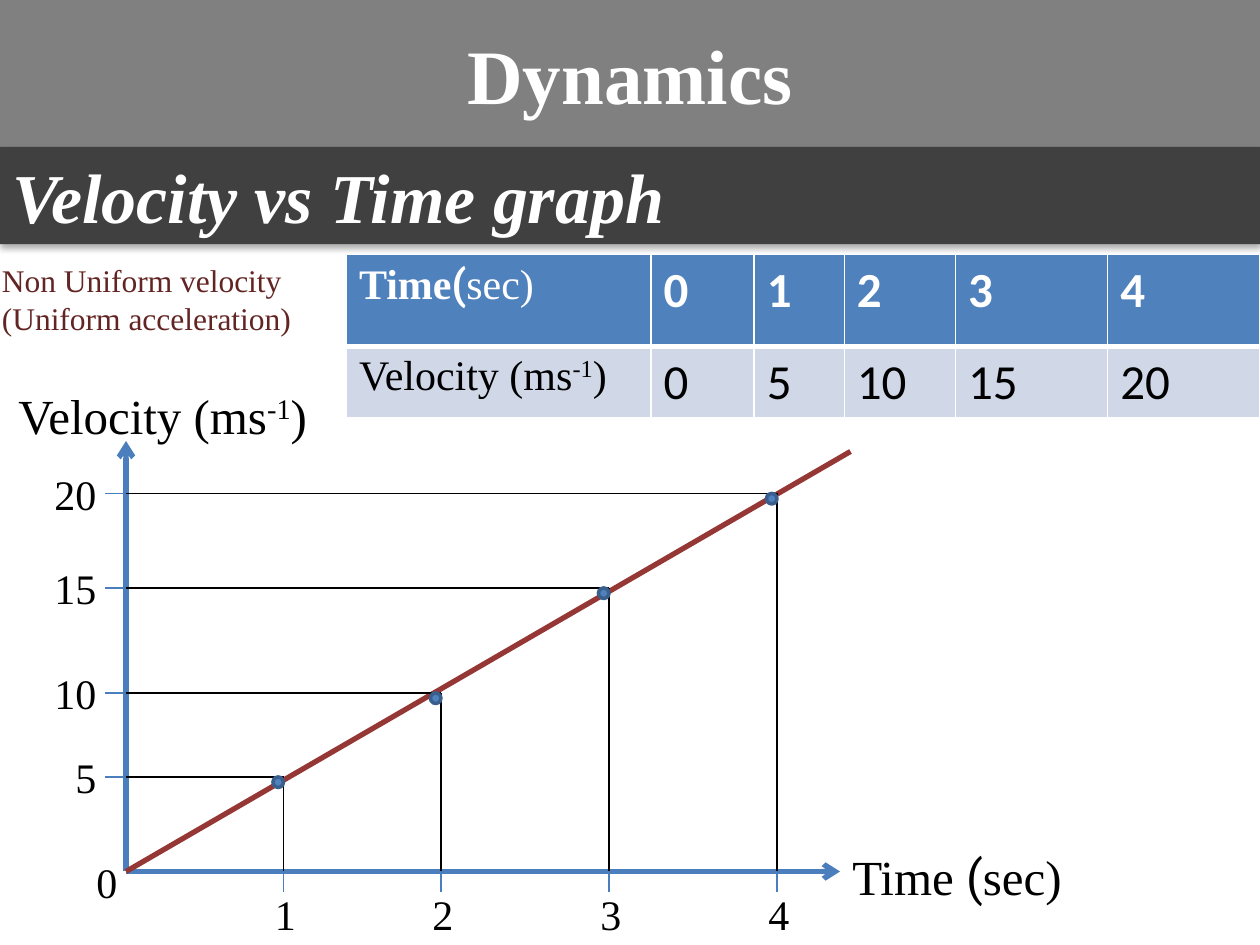
import pptx
import pptx.util
import pptx.dml.color
import pptx.enum.shapes
import pptx.enum.text
import pptx.oxml
import pptx.oxml.ns

Pt = pptx.util.Pt
SHAPE = pptx.enum.shapes.MSO_SHAPE
ALIGN = pptx.enum.text.PP_ALIGN
SERIF = "Times New Roman"
COLORS = {"black": "000000", "white": "FFFFFF", "maroon": "632523",
          "axis": "4B7EBC", "trend": "953735", "blue": "4F81BD",
          "dot edge": "3A5F8C", "pale": "D0D8E8",
          "title bar": "808080", "heading bar": "404040"}

# Content: runs are (text, font, superscript)
TITLE = "Dynamics"
HEADING = "Velocity vs Time graph"
NOTE = ["Non Uniform velocity", "(Uniform acceleration)"]
VELOCITY = [("Velocity (ms", SERIF, False), ("-1", SERIF, True), (")", SERIF, False)]
TIME_AXIS = [("Time ", SERIF, False), ("(", "Roboto", False), ("sec)", SERIF, False)]
TIME_HEAD = [("Time", SERIF, False), ("(", "Roboto", False), ("sec)", SERIF, False)]
TIMES = ["0", "1", "2", "3", "4"]
SPEEDS = ["0", "5", "10", "15", "20"]
COLUMNS = [174, 59, 51.5, 63.5, 87, 87]
ROWS = [52.5, 40]

# Graph positions
ORIGIN_X, ORIGIN_Y = 72, 498
TICK = 12
POINTS = [(162, 444), (252, 396), (348, 336), (444, 282)]

prs = pptx.Presentation()
prs.slide_width, prs.slide_height = Pt(720), Pt(540)
s = prs.slides.add_slide(prs.slide_layouts[6])


def rgb(name):
    return pptx.dml.color.RGBColor.from_string(COLORS[name])


def style(r, size, color, font=SERIF, bold=False, italic=False):
    r.font.name, r.font.size = font, Pt(size)
    r.font.bold, r.font.italic = bold, italic
    r.font.color.rgb = rgb(color)


def add_runs(p, runs, size, color):
    for text, font, superscript in runs:
        r = p.add_run()
        r.text = text
        style(r, size, color, font)
        if superscript:
            r._r.get_or_add_rPr().set("baseline", "30000")


def text_box(x, y, w, h, wrap=True):
    tf = s.shapes.add_textbox(Pt(x), Pt(y), Pt(w), Pt(h)).text_frame
    tf.word_wrap = wrap
    return tf


def label(text, x, y, w):
    add_runs(text_box(x, y, w, 36).paragraphs[0], [(text, SERIF, False)], 24, "black")


def line(x1, y1, x2, y2, color, width, arrow=False):
    c = s.shapes.add_connector(pptx.enum.shapes.MSO_CONNECTOR.STRAIGHT,
                               Pt(x1), Pt(y1), Pt(x2), Pt(y2))
    c.line.color.rgb, c.line.width = rgb(color), Pt(width)
    if arrow:
        ln = c.line._get_or_add_ln()
        ln.append(ln.makeelement(pptx.oxml.ns.qn("a:tailEnd"), {"type": "arrow"}))
    spPr = c._element.spPr
    spPr.append(spPr.makeelement(pptx.oxml.ns.qn("a:effectLst"), {}))


def bar(text, y, h, fill, size, align, italic):
    sp = s.shapes.add_shape(SHAPE.RECTANGLE, 0, Pt(y), Pt(720), Pt(h))
    sp.fill.solid()
    sp.fill.fore_color.rgb = rgb(fill)
    sp.line.fill.background()
    sp._element.spPr.append(pptx.oxml.parse_xml(
        f'<a:effectLst {pptx.oxml.ns.nsdecls("a")}>'
        f'<a:outerShdw blurRad="{Pt(3.5)}" dist="{Pt(2.2)}" dir="5400000" rotWithShape="0">'
        f'<a:srgbClr val="{COLORS["black"]}"><a:alpha val="32000"/></a:srgbClr>'
        '</a:outerShdw></a:effectLst>'))
    tf = sp.text_frame
    tf.text = text
    tf.vertical_anchor = pptx.enum.text.MSO_ANCHOR.MIDDLE
    p = tf.paragraphs[0]
    p.alignment = align
    style(p.runs[0], size, "white", bold=True, italic=italic)


def format_cell(cell, fill, top, bottom):
    tcPr = cell._tc.get_or_add_tcPr()
    for side, width in (("L", 1), ("R", 1), ("T", top), ("B", bottom)):
        tcPr.append(pptx.oxml.parse_xml(
            f'<a:ln{side} {pptx.oxml.ns.nsdecls("a")} w="{Pt(width)}"><a:solidFill>'
            f'<a:srgbClr val="{COLORS["white"]}"/></a:solidFill></a:ln{side}>'))
    cell.fill.solid()
    cell.fill.fore_color.rgb = rgb(fill)


# Note beside the table
tf = text_box(-6, 145.5, 180, 51)
tf.text = "\n".join(NOTE)
for p in tf.paragraphs:
    style(p.runs[0], 18, "maroon")

# Table of values
table = s.shapes.add_table(2, 6, Pt(198), Pt(145.5), Pt(sum(COLUMNS)), Pt(sum(ROWS))).table
for column, width in zip(table.columns, COLUMNS):
    column.width = Pt(width)
for row, height in zip(table.rows, ROWS):
    row.height = Pt(height)
for i, (head, values, fill, color, top, bottom) in enumerate([
        (TIME_HEAD, TIMES, "blue", "white", 1, 3),
        (VELOCITY, SPEEDS, "pale", "black", 3, 1)]):
    for j in range(len(COLUMNS)):
        cell = table.cell(i, j)
        format_cell(cell, fill, top, bottom)
        p = cell.text_frame.paragraphs[0]
        if j == 0:
            add_runs(p, head, 24, color)
            p.runs[0].font.bold = i == 0
            p.runs[1].font.bold = i == 0
        else:
            p.text = values[j - 1]
            style(p.runs[0], 28, color, "Calibri", bold=i == 0)

# Axes and their names
line(ORIGIN_X, ORIGIN_Y, ORIGIN_X, 252, "axis", 3, arrow=True)
line(ORIGIN_X, ORIGIN_Y, 480, ORIGIN_Y, "axis", 3, arrow=True)
add_runs(text_box(3.5, 216.5, 194.5, 41).paragraphs[0], VELOCITY, 28, "black")
add_runs(text_box(480, 480, 136, 41, wrap=False).paragraphs[0], TIME_AXIS, 28, "black")
label(TIMES[0], 48, 486, 30)

# Ticks and labels
for (x, y), time, speed in zip(POINTS, TIMES[1:], SPEEDS[1:]):
    line(x, ORIGIN_Y, x, ORIGIN_Y + TICK, "axis", 0.75)
    line(ORIGIN_X, y, ORIGIN_X - TICK, y, "axis", 0.75)
    label(time, x - 12, 504, 30)
    label(speed, 24 if len(speed) > 1 else 36, y - 18, 48)

# Velocity line, guides and points
line(ORIGIN_X, ORIGIN_Y, 486, 258, "trend", 3)
for x, y in POINTS:
    line(ORIGIN_X, y, x, y, "black", 0.75)
    line(x, ORIGIN_Y, x, y, "black", 0.75)
for x, y in POINTS:
    dot = s.shapes.add_shape(SHAPE.OVAL, Pt(x - 6), Pt(y), Pt(6), Pt(6))
    dot.shadow.inherit = False
    dot.fill.solid()
    dot.fill.fore_color.rgb = rgb("blue")
    dot.line.color.rgb, dot.line.width = rgb("dot edge"), Pt(2)

# Title and heading bars
bar(TITLE, 0, 84, "title bar", 44, ALIGN.CENTER, False)
bar(HEADING, 84, 55.5, "heading bar", 40, ALIGN.LEFT, True)

prs.save("out.pptx")
